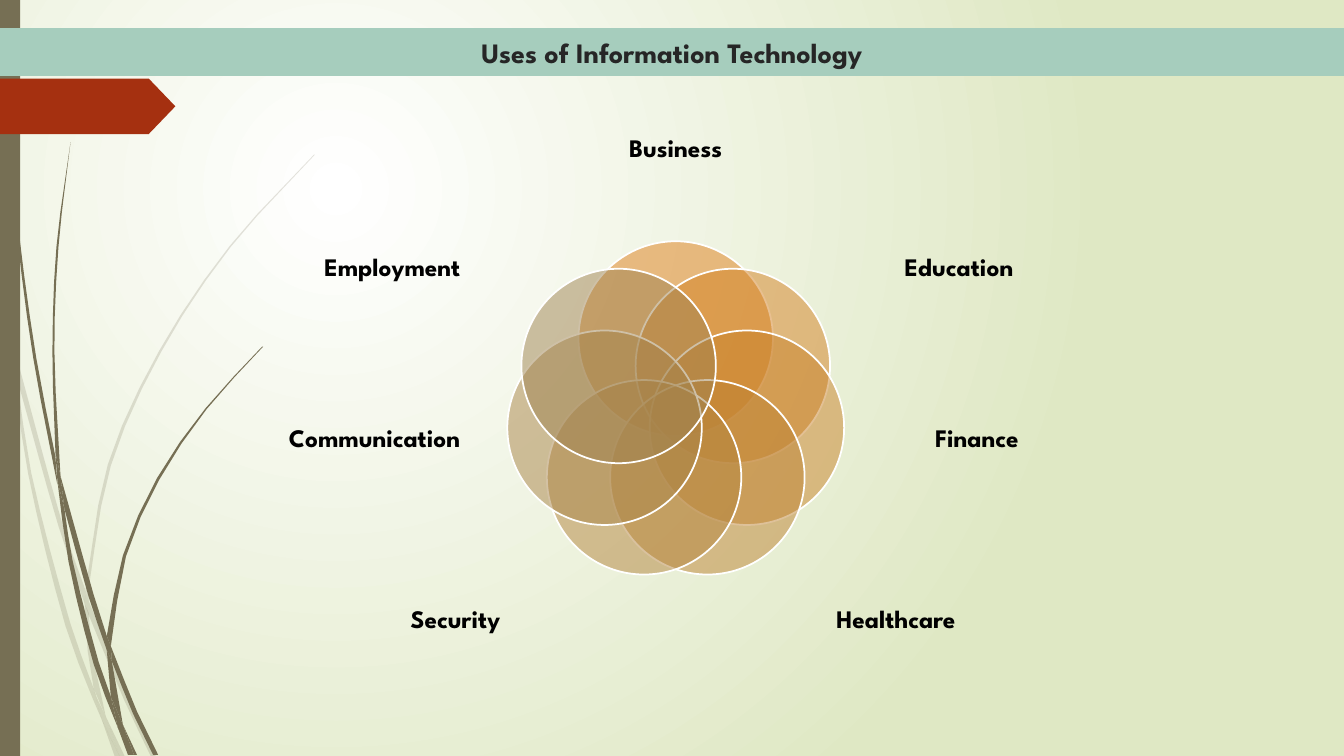
from math import ceil, cos, dist, pi, sin

from lxml import etree
from pptx import Presentation
from pptx.dml.color import RGBColor
from pptx.enum.shapes import MSO_SHAPE
from pptx.enum.text import MSO_ANCHOR, PP_ALIGN
from pptx.oxml.ns import qn
from pptx.util import Cm, Pt

# Content
TITLE = "Uses of Information Technology"
FONT = "League Spartan"
COLORS = {
    "stem": "766F54", "arrow": "A53010", "bar": "A6CDBD", "title": "262626",
    "label": "000000", "outline": "FFFFFF", "glow": "FFFFFF", "edge": "DFE8C4",
}
# Clockwise from the top: label, petal colour, label centre from the axis, from the top, label size
PETALS = [
    ("Business", "DE7E18", 0, 3.76, (5.61, 3.0)),
    ("Education", "D38122", 7.14, 6.76, (5.31, 3.3)),
    ("Finance", "C9832B", 7.59, 11.06, (5.21, 3.53)),
    ("Healthcare", "BE8435", 5.55, 15.63, (5.61, 3.23)),
    ("Security", "B4853E", -5.55, 15.63, (5.61, 3.23)),
    ("Communication", "A98448", -7.59, 11.06, (5.21, 3.53)),
    ("Employment", "9F8351", -7.14, 6.76, (5.31, 3.3)),
]
FLOWER_X, FLOWER_Y, RING_RADIUS, PETAL_SIZE = 17.03, 10.37, 1.84, 4.9

# Grass blades: each is an outward and a returning edge, in hundredths of an inch
BLADE_UNIT = 0.0254
CURVE_STEP = 50
PALE_BLADES = [
    ([(11, 350), (9, 322), (0, 282)], [(0, 299), (10, 344)]),
    ([(17, 376), (58, 522), (84, 599)], [(85, 586), (62, 520), (14, 345)]),
    ([(88, 610), (123, 694), (150, 751)], [(155, 751), (127, 692), (88, 596)]),
    ([(105, 711), (119, 751)], [(124, 751)]),
    ([(11, 350), (28, 470), (65, 621), (92, 693), (101, 714)],
     [(93, 683), (70, 619), (31, 469), (17, 376)]),
    ([(84, 599), (87, 646), (93, 683), (105, 711)], [(91, 646), (88, 608)]),
    ([(88, 596), (88, 584), (110, 462), (160, 349), (229, 245), (312, 154)],
     [(312, 153), (228, 244), (158, 348), (107, 461), (85, 584)]),
    ([(101, 714), (114, 751)], [(119, 751)]),
    ([(88, 610), (88, 596)], [(85, 586), (84, 599)]),
    ([(93, 683), (101, 714), (119, 751)], [(105, 711), (96, 692)]),
]
DARK_BLADES = [
    ([(3, 0), (7, 110), (17, 233), (33, 355), (57, 481)],
     [(55, 453), (36, 355), (19, 232), (8, 109), (4, 0)]),
    ([(64, 505), (88, 592), (106, 645)], [(106, 631), (93, 590), (60, 472)]),
    ([(111, 656), (132, 708), (152, 749)], [(157, 749), (136, 706), (110, 641)]),
    ([(57, 477), (68, 557), (93, 659), (117, 722)],
     [(110, 691), (98, 657), (72, 556), (64, 505)]),
    ([(60, 472), (54, 349), (58, 245), (70, 141)],
     [(70, 141), (56, 245), (52, 349), (55, 449)]),
    ([(122, 719), (133, 749)], [(136, 749)]),
    ([(57, 477), (64, 505)], [(60, 472), (55, 449)]),
    ([(110, 641), (125, 552), (158, 476), (205, 406), (261, 344)],
     [(260, 344), (204, 405), (156, 474), (122, 551), (106, 631)]),
    ([(117, 722), (127, 749)], [(131, 749)]),
    ([(106, 645), (110, 691), (122, 719)], [(111, 656)]),
    ([(106, 645), (111, 656)], [(110, 641), (106, 631)]),
    ([(110, 691), (117, 722), (130, 749)], [(133, 749), (122, 719)]),
]


def paint(shape, color, opacity=100, outline=None):
    shape.shadow.inherit = False
    shape.fill.solid()
    shape.fill.fore_color.rgb = RGBColor.from_string(color)
    if opacity < 100:
        fill_color = shape.element.spPr.find(qn("a:solidFill")).find(qn("a:srgbClr"))
        etree.SubElement(fill_color, qn("a:alpha"), val=str(opacity * 1000))
    if outline:
        shape.line.color.rgb = RGBColor.from_string(outline)
        shape.line.width = Pt(1.25)
    else:
        shape.line.fill.background()


def write_text(shape, text, *, size, color, line_spacing=1.0, margin=0):
    frame = shape.text_frame
    frame.word_wrap = True
    frame.vertical_anchor = MSO_ANCHOR.MIDDLE
    frame.margin_left = frame.margin_right = frame.margin_top = frame.margin_bottom = Cm(margin)
    paragraph = frame.paragraphs[0]
    paragraph.alignment = PP_ALIGN.CENTER
    paragraph.line_spacing = line_spacing
    run = paragraph.add_run()
    run.text = text
    run.font.name = FONT
    run.font.size = Pt(size)
    run.font.bold = True
    run.font.color.rgb = RGBColor.from_string(color)


def smooth(points):
    """Trace a smooth curve through the points of one edge."""
    slopes = []
    for i, point in enumerate(points):
        before, after = points[max(i - 1, 0)], points[min(i + 1, len(points) - 1)]
        length = dist(before, point) + dist(point, after) or 1
        slopes.append([(b - a) / length for a, b in zip(before, after)])
    curve = [points[0]]
    for i, (start, end) in enumerate(zip(points, points[1:])):
        length = dist(start, end)
        steps = ceil(length / CURVE_STEP)
        for step in range(1, steps + 1):
            t = step / steps
            curve.append(tuple(
                (2 * t**3 - 3 * t**2 + 1) * start[axis] + (3 * t**2 - 2 * t**3) * end[axis]
                + length * ((t**3 - 2 * t**2 + t) * slopes[i][axis]
                            + (t**3 - t**2) * slopes[i + 1][axis])
                for axis in (0, 1)))
    return curve


def add_blade(slide, edges, opacity):
    outline = [(Cm(x * BLADE_UNIT), Cm(y * BLADE_UNIT)) for edge in edges for x, y in smooth(edge)]
    builder = slide.shapes.build_freeform(*outline[0])
    builder.add_line_segments(outline[1:], close=True)
    paint(builder.convert_to_shape(), COLORS["stem"], opacity)


def set_background(slide):
    fill = slide.background.fill
    fill.gradient()
    for stop, name in zip(fill.gradient_stops, ("glow", "edge")):
        stop.color.rgb = RGBColor.from_string(COLORS[name])
    gradient = slide.element.find(".//" + qn("a:gradFill"))
    gradient.remove(gradient.find(qn("a:lin")))
    circle = etree.SubElement(gradient, qn("a:path"), path="circle")
    etree.SubElement(circle, qn("a:fillToRect"), l="50000", t="50000", r="100000", b="100000")


def main():
    presentation = Presentation()
    presentation.slide_width, presentation.slide_height = Cm(33.87), Cm(19.05)
    slide = presentation.slides.add_slide(presentation.slide_layouts[5])
    shapes = slide.shapes
    set_background(slide)

    # Grass, side strip and arrow
    for blades, opacity in ((PALE_BLADES, 20), (DARK_BLADES, 100)):
        for edges in blades:
            add_blade(slide, edges, opacity)
    strip = shapes.add_shape(MSO_SHAPE.RECTANGLE, 0, 0, Cm(0.51), Cm(19.05))
    paint(strip, COLORS["stem"])
    arrow = shapes.add_shape(MSO_SHAPE.PENTAGON, 0, Cm(1.98), Cm(4.42), Cm(1.4))
    arrow.adjustments[0] = 0.48
    paint(arrow, COLORS["arrow"])

    # Title bar, in front of the strip
    title = shapes.title
    title.left, title.top, title.width, title.height = 0, Cm(0.71), Cm(33.87), Cm(1.2)
    paint(title, COLORS["bar"])
    write_text(title, TITLE, size=20, color=COLORS["title"], margin=0.13)
    arrow.element.addnext(title.element)

    # Petals on a ring, each with its label
    for i, (label, color, offset, middle, (width, height)) in enumerate(PETALS):
        angle = 2 * pi * i / len(PETALS)
        left = FLOWER_X + RING_RADIUS * sin(angle) - PETAL_SIZE / 2
        top = FLOWER_Y - RING_RADIUS * cos(angle) - PETAL_SIZE / 2
        petal = shapes.add_shape(MSO_SHAPE.OVAL, Cm(left), Cm(top), Cm(PETAL_SIZE), Cm(PETAL_SIZE))
        paint(petal, color, 50, COLORS["outline"])
        box = shapes.add_textbox(Cm(FLOWER_X + offset - width / 2), Cm(middle - height / 2),
                                 Cm(width), Cm(height))
        write_text(box, label, size=18, color=COLORS["label"], line_spacing=0.9)

    presentation.save("out.pptx")


if __name__ == "__main__":
    main()
